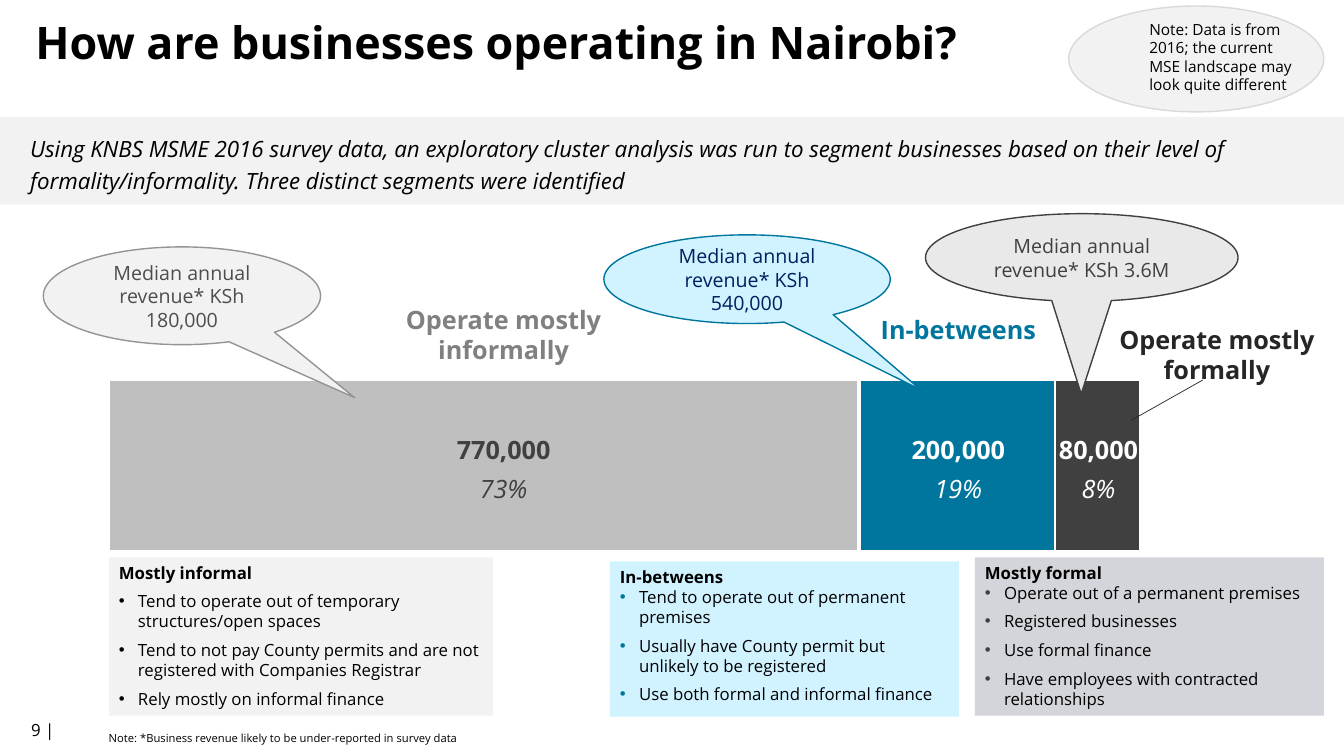
from pptx import Presentation
from pptx.dml.color import RGBColor
from pptx.enum import shapes, text
from pptx.oxml import ns
from pptx.util import Inches, Pt
from lxml import etree

COLORS = {
    "black": "000000", "white": "FFFFFF", "pale": "F2F2F2", "rim": "D9D9D9",
    "silver": "BFBFBF", "gray": "808080", "dark": "404040", "ink": "262626",
    "teal": "00769E", "sky": "D0F3FF", "navy": "002060", "slate": "4D4D4D",
    "outline": "949494", "mist": "E9E9E9", "cloud": "D4D5DA",
}
SHAPE = shapes.MSO_SHAPE
CENTER = text.PP_ALIGN.CENTER


def add_box(kind, at, fill=None, line=None):
    place = [Inches(length) for length in at]
    if kind is None:
        shape = slide.shapes.add_textbox(*place)
    else:
        shape = slide.shapes.add_shape(kind, *place)
        shape.shadow.inherit = False
        shape.fill.solid()
        shape.fill.fore_color.rgb = RGBColor.from_string(COLORS[fill])
        if line:
            shape.line.color.rgb = RGBColor.from_string(COLORS[line])
            shape.line.width = Pt(1)
        else:
            shape.line.fill.background()
    shape.text_frame.word_wrap = True
    shape.text_frame.vertical_anchor = text.MSO_ANCHOR.TOP
    return shape


def write(shape, words, size=12, color="black", bold=False, italic=False,
          align=text.PP_ALIGN.LEFT, after=0, spacing=None, bullet=None):
    frame = shape.text_frame
    paragraph = frame.paragraphs[0] if not frame.text else frame.add_paragraph()
    paragraph.alignment = align
    paragraph.space_before = Pt(0)
    paragraph.space_after = Pt(after)
    if spacing:
        paragraph.line_spacing = spacing
    if bullet:
        properties = paragraph._p.get_or_add_pPr()
        properties.set("marL", str(Inches(0.19)))
        properties.set("indent", str(-Inches(0.19)))
        bullet_color = etree.SubElement(properties, ns.qn("a:buClr"))
        etree.SubElement(bullet_color, ns.qn("a:srgbClr"), val=COLORS[bullet])
        etree.SubElement(properties, ns.qn("a:buFont"), typeface="Arial")
        etree.SubElement(properties, ns.qn("a:buChar"), char="•")
    run = paragraph.add_run()
    run.text = words
    run.font.name = "Open Sans"
    run.font.size = Pt(size)
    run.font.bold = bold
    run.font.italic = italic
    run.font.color.rgb = RGBColor.from_string(COLORS[color])


presentation = Presentation()
presentation.slide_width = Inches(13.33)
presentation.slide_height = Inches(7.5)
slide = presentation.slides.add_slide(presentation.slide_layouts[5])

title = slide.shapes.title
title.left, title.top, title.width, title.height = [
    Inches(length) for length in (0.25, 0.18, 10.48, 0.54)]
title.text_frame.margin_top = title.text_frame.margin_bottom = 0
title.text_frame.vertical_anchor = text.MSO_ANCHOR.MIDDLE
write(title, "How are businesses operating in Nairobi?", size=32, bold=True, spacing=0.9)

add_box(SHAPE.OVAL, (10.6, 0.06, 2.53, 1.05), "pale", "rim")
data_note = add_box(None, (11.3, 0.15, 1.68, 0.84))
write(data_note, "Note: Data is from 2016; the current MSE landscape may look quite different", size=11)

add_box(SHAPE.RECTANGLE, (0, 1.16, 13.33, 0.87), "pale")
summary = add_box(None, (0.2, 1.24, 12.81, 0.72))
write(summary, "Using KNBS MSME 2016 survey data, an exploratory cluster analysis was run to "
      "segment businesses based on their level of formality/informality. Three distinct "
      "segments were identified", size=16, italic=True, spacing=1.2)

segments = [
    (1.08, 7.43, "silver", 4.24, "770,000", "73%", "dark"),
    (8.53, 1.93, "teal", 8.75, "200,000", "19%", "white"),
    (10.47, 0.83, "dark", 10.14, "80,000", "8%", "white"),
]
for left, width, fill, label_left, count, share, color in segments:
    add_box(SHAPE.RECTANGLE, (left, 3.77, width, 1.69), fill, "white")
    label = add_box(None, (label_left, 4.26, 1.51, 0.79))
    write(label, count, size=18, color=color, bold=True, align=CENTER, after=6)
    write(label, share, size=18, color=color, italic=True, align=CENTER, after=6)

headings = [
    ((3.71, 2.97, 2.57, 0.71), "Operate mostly informally", "gray"),
    ((8.35, 3.07, 2.31, 0.4), "In-betweens", "teal"),
    ((10.87, 3.17, 2.4, 0.71), "Operate mostly formally", "ink"),
]
for at, words, color in headings:
    write(add_box(None, at), words, size=18, color=color, bold=True, align=CENTER)

leader = slide.shapes.add_connector(
    shapes.MSO_CONNECTOR.STRAIGHT, Inches(11.22), Inches(4.17), Inches(11.93), Inches(3.77))
leader.line.color.rgb = RGBColor.from_string(COLORS["ink"])
leader.line.width = Pt(0.5)
etree.SubElement(leader._element.spPr, ns.qn("a:effectLst"))

callouts = [
    ((0.43, 2.45, 2.75, 0.97), (0.622, 1.041), "pale", "outline", "180,000", "slate"),
    ((5.99, 2.33, 2.84, 0.88), (0.606, 1.246), "sky", "teal", "540,000", "navy"),
    ((9.18, 2.12, 3.1, 0.87), (-0.002, 1.556), "mist", "dark", "3.6M", "dark"),
]
for at, tip, fill, line, revenue, color in callouts:
    callout = add_box(SHAPE.OVAL_CALLOUT, at, fill, line)
    callout.adjustments[0], callout.adjustments[1] = tip
    callout.text_frame.vertical_anchor = text.MSO_ANCHOR.MIDDLE
    write(callout, f"Median annual revenue* KSh {revenue}", size=14, color=color, align=CENTER)

profiles = [
    ((1.08, 5.53, 3.81, 1.57), "pale", "black", 6, "Mostly informal", [
        "Tend to operate out of temporary structures/open spaces",
        "Tend to not pay County permits and are not registered with Companies Registrar",
        "Rely mostly on informal finance"]),
    ((6.05, 5.57, 3.46, 1.54), "sky", "teal", 0, "In-betweens", [
        "Tend to operate out of permanent premises",
        "Usually have County permit but unlikely to be registered",
        "Use both formal and informal finance"]),
    ((9.67, 5.53, 3.46, 1.57), "cloud", "dark", 0, "Mostly formal", [
        "Operate out of a permanent premises",
        "Registered businesses",
        "Use formal finance",
        "Have employees with contracted relationships"]),
]
for at, fill, bullet, after, heading, traits in profiles:
    profile = add_box(SHAPE.RECTANGLE, at, fill)
    write(profile, heading, bold=True, after=after)
    for trait in traits:
        write(profile, trait, after=6, bullet=bullet)

write(add_box(None, (0.21, 7.09, 0.69, 0.4)), "9 |")
footnote = add_box(None, (0.98, 7.21, 8.68, 0.24))
write(footnote, "Note: *Business revenue likely to be under-reported in survey data", size=8)

presentation.save("out.pptx")
